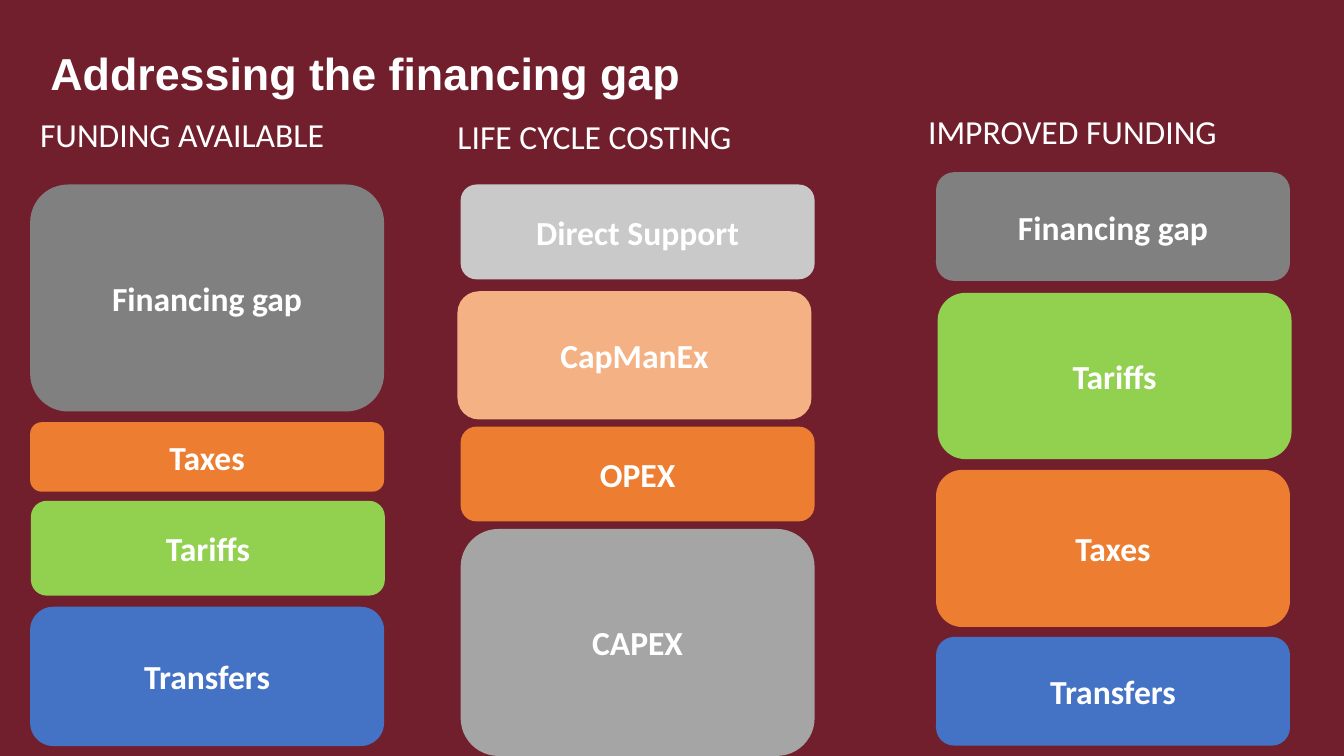
"""Build a slide comparing funding available, life cycle costs and improved funding."""
from typing import NamedTuple

from pptx import Presentation
from pptx.dml.color import RGBColor
from pptx.enum import shapes, text
from pptx.util import Cm, Pt

WHITE = "FFFFFF"
BACKGROUND = "711F2D"
BLUE, ORANGE, GREEN, GREY = "4472C4", "ED7D31", "92D050", "808080"
PEACH, SILVER, LIGHT_GREY = "F4B183", "A5A5A5", "C9C9C9"
BLOCK_WIDTH = 8.92


class Block(NamedTuple):
    label: str
    color: str
    top: float
    height: float
    shift: float = 0


class Column(NamedTuple):
    heading: str
    heading_left: float
    heading_top: float
    left: float
    blocks: list[Block]


COLUMNS = [
    Column("FUNDING AVAILABLE", 0.76, 2.74, 0.76, [
        Block("Financing gap", GREY, 4.65, 5.72),
        Block("Taxes", ORANGE, 10.64, 1.75),
        Block("Tariffs", GREEN, 12.62, 2.39, 0.02),
        Block("Transfers", BLUE, 15.29, 3.51),
    ]),
    Column("LIFE CYCLE COSTING", 11.28, 2.79, 11.61, [
        Block("Direct Support", LIGHT_GREY, 4.65, 2.39),
        Block("CapManEx", PEACH, 7.34, 3.23, -0.08),
        Block("OPEX", ORANGE, 10.75, 2.39),
        Block("CAPEX", SILVER, 13.33, 5.72),
    ]),
    Column("IMPROVED FUNDING", 23.14, 2.67, 23.59, [
        Block("Financing gap", GREY, 4.34, 2.74),
        Block("Tariffs", GREEN, 7.38, 4.19, 0.04),
        Block("Taxes", ORANGE, 11.84, 3.96),
        Block("Transfers", BLUE, 16.05, 2.74),
    ]),
]


def rgb(color: str) -> RGBColor:
    return RGBColor.from_string(color)


def add_text(tf, content: str, size: float, bold: bool, font: str = "Calibri") -> None:
    tf.word_wrap = True
    r = tf.paragraphs[0].add_run()
    r.text = content
    r.font.name = font
    r.font.size = Pt(size)
    r.font.bold = bold
    r.font.color.rgb = rgb(WHITE)


def draw_title(s, content: str) -> None:
    sp = s.shapes.add_textbox(Cm(1.27), Cm(0.99), Cm(31.24), Cm(1.85))
    tf = sp.text_frame
    tf.margin_left = tf.margin_right = tf.margin_bottom = 0
    tf.margin_top = Cm(0.15)
    add_text(tf, content, 32, True, "Arial")


def draw_block(s, block: Block, left: float) -> None:
    sp = s.shapes.add_shape(shapes.MSO_SHAPE.ROUNDED_RECTANGLE, Cm(left + block.shift),
                            Cm(block.top), Cm(BLOCK_WIDTH), Cm(block.height))
    sp.shadow.inherit = False
    sp.fill.solid()
    sp.fill.fore_color.rgb = rgb(block.color)
    sp.line.fill.background()
    tf = sp.text_frame
    tf.vertical_anchor = text.MSO_ANCHOR.MIDDLE
    tf.paragraphs[0].alignment = text.PP_ALIGN.CENTER
    add_text(tf, block.label, 24, True)


def draw_column(s, column: Column) -> None:
    sp = s.shapes.add_textbox(Cm(column.heading_left), Cm(column.heading_top),
                              Cm(9.91), Cm(1.27))
    add_text(sp.text_frame, column.heading, 24, False)
    for block in column.blocks:
        draw_block(s, block, column.left)


def main() -> None:
    prs = Presentation()
    prs.slide_width, prs.slide_height = Cm(33.87), Cm(19.05)
    s = prs.slides.add_slide(prs.slide_layouts[6])
    s.background.fill.solid()
    s.background.fill.fore_color.rgb = rgb(BACKGROUND)
    draw_title(s, "Addressing the financing gap")
    for column in COLUMNS:
        draw_column(s, column)
    prs.save("out.pptx")


if __name__ == "__main__":
    main()
